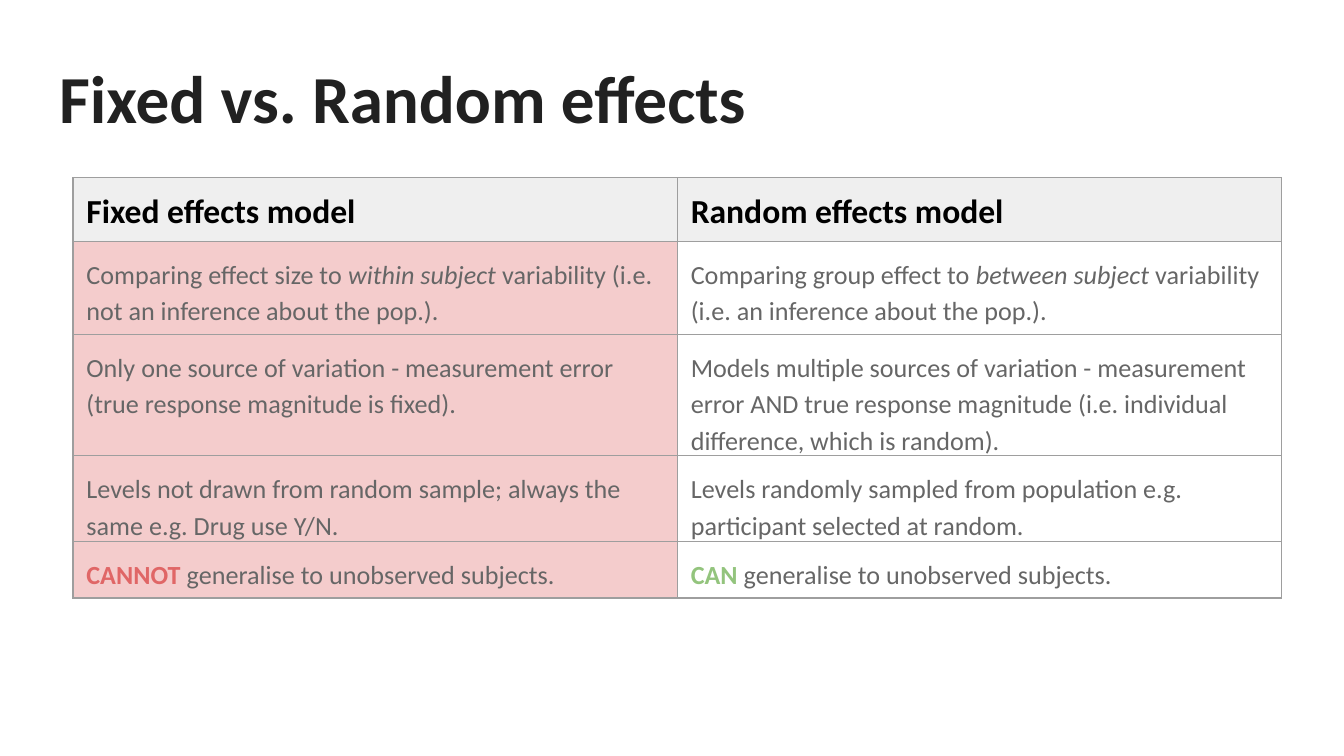
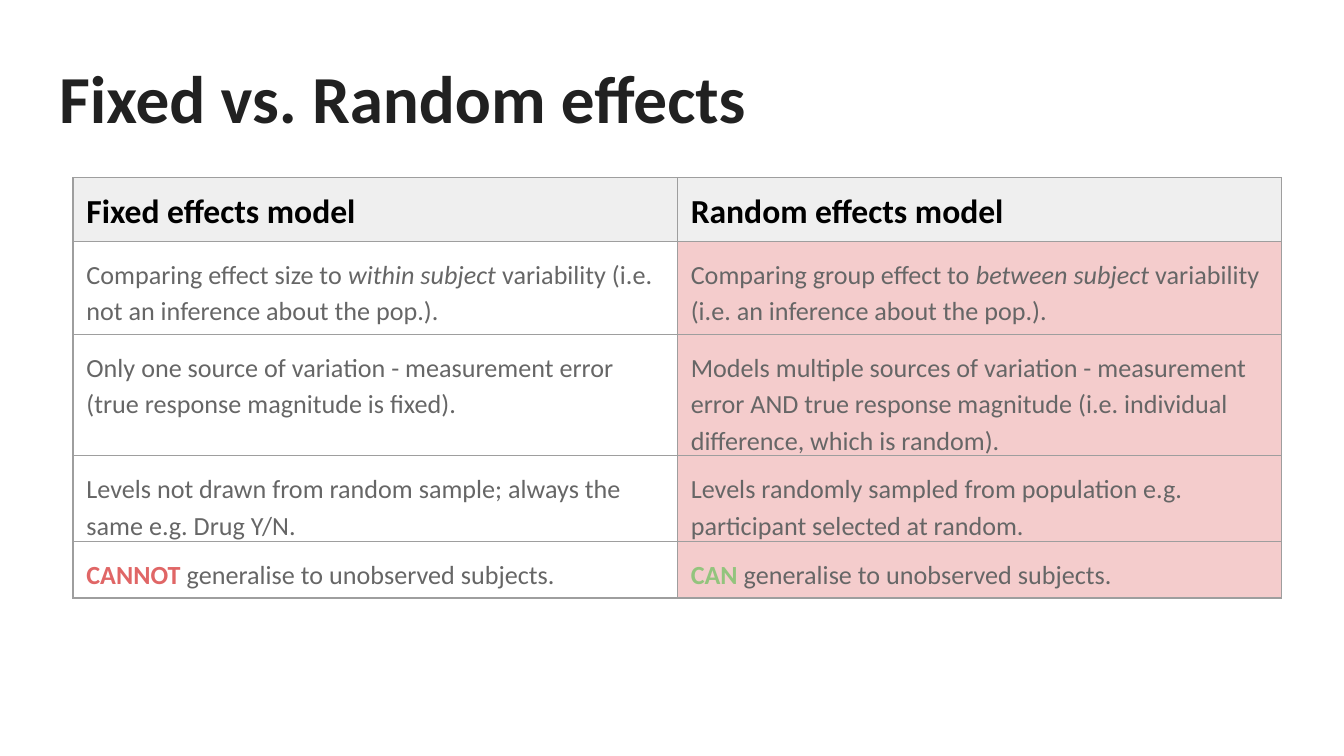
from lxml import etree
from pptx import Presentation
from pptx import util as u
from pptx.dml.color import RGBColor
from pptx.enum import text
from pptx.oxml import ns

COLOURS = {
    "page": "FFFFFF", "title": "212121", "heading": "000000", "body": "666666",
    "header": "EFEFEF", "highlight": "F4CCCC", "border": "9E9E9E",
    "negative": "E06666", "positive": "93C47D",
}
TITLE = "Fixed vs. Random effects"
HEADINGS = ["Fixed effects model", "Random effects model"]
ROW_HEIGHTS = [8.4, 12.3, 12.3, 7.5, 7.5]
TABLE_HEIGHT = 55.5
GENERALISE = " generalise to unobserved subjects."


class SlideWriter:
    """Holds the shared style and the current slide; lengths are percent of the slide."""

    font = "Calibri"
    inset = u.Inches(0.1)

    def __init__(self, deck):
        self.deck = deck
        self.page = None

    def colour(self, name):
        return RGBColor.from_string(COLOURS[name])

    def across(self, percent):
        return round(self.deck.slide_width * percent / 100)

    def down(self, percent):
        return round(self.deck.slide_height * percent / 100)

    def new_page(self):
        self.page = self.deck.slides.add_slide(self.deck.slide_layouts[6])
        background = self.page.background.fill
        background.solid()
        background.fore_color.rgb = self.colour("page")

    def style(self, paragraph, size, colour, bold=False):
        paragraph.font.name = self.font
        paragraph.font.size = u.Pt(size)
        paragraph.font.bold = bold
        paragraph.font.color.rgb = self.colour(colour)

    def title(self, words):
        box = self.page.shapes.add_textbox(
            self.across(3.41), self.down(5.7), self.across(93.2), self.down(15.7))
        frame = box.text_frame
        frame.word_wrap = True
        frame.vertical_anchor = text.MSO_ANCHOR.TOP
        frame.margin_left = frame.margin_right = self.inset
        frame.margin_top = frame.margin_bottom = self.inset
        para = frame.paragraphs[0]
        para.text = words
        self.style(para, 36, "title", bold=True)

    def borders(self, cell):
        properties = cell._tc.get_or_add_tcPr()
        for position, side in enumerate(("lnL", "lnR", "lnT", "lnB")):
            line = etree.Element(ns.qn(f"a:{side}"), w=str(u.Pt(0.75)))
            fill = etree.SubElement(line, ns.qn("a:solidFill"))
            etree.SubElement(fill, ns.qn("a:srgbClr"), val=COLOURS["border"])
            properties.insert(position, line)

    def cell(self, cell, fill):
        cell.margin_left = cell.margin_right = cell.margin_top = self.inset
        cell.margin_bottom = 0
        if fill:
            cell.fill.solid()
            cell.fill.fore_color.rgb = self.colour(fill)
        else:
            cell.fill.background()
        self.borders(cell)
        return cell.text_frame.paragraphs[0]

    def heading_cell(self, cell, words):
        para = self.cell(cell, "header")
        para.text = words
        self.style(para, 18, "heading", bold=True)

    def body_cell(self, cell, spans, fill):
        para = self.cell(cell, fill)
        para.line_spacing = 1.15
        para.space_after = u.Pt(16)
        self.style(para, 14, "body")
        for words, emphasis in spans:
            span = para.add_run()
            span.text = words
            if emphasis == "italic":
                span.font.italic = True
            elif emphasis:
                span.font.bold = True
                span.font.color.rgb = self.colour(emphasis)

    def table(self, headings, rows, highlighted):
        frame = self.page.shapes.add_table(
            len(rows) + 1, len(headings), self.across(5.43), self.down(23.5),
            self.across(89.94), self.down(TABLE_HEIGHT))
        table = frame.table
        table.first_row = table.horz_banding = False
        for row, height in zip(table.rows, ROW_HEIGHTS):
            row.height = self.down(height)
        frame.height = self.down(TABLE_HEIGHT)
        for column, heading in enumerate(headings):
            self.heading_cell(table.cell(0, column), heading)
            fill = "highlight" if column == highlighted else None
            for number, row in enumerate(rows, start=1):
                self.body_cell(table.cell(number, column), row[column], fill)


def comparison_rows(drug_example):
    return [
        ([("Comparing effect size to ", None), ("within subject", "italic"),
          (" variability (i.e. not an inference about the pop.).", None)],
         [("Comparing group effect to ", None), ("between subject", "italic"),
          (" variability (i.e. an inference about the pop.).", None)]),
        ([("Only one source of variation - measurement error "
           "(true response magnitude is fixed).", None)],
         [("Models multiple sources of variation - measurement error AND true "
           "response magnitude (i.e. individual difference, which is random).", None)]),
        ([("Levels not drawn from random sample; always the same "
           f"e.g. {drug_example}.", None)],
         [("Levels randomly sampled from population e.g. "
           "participant selected at random.", None)]),
        ([("CANNOT", "negative"), (GENERALISE, None)],
         [("CAN", "positive"), (GENERALISE, None)]),
    ]


def main():
    deck = Presentation()
    deck.slide_width = u.Inches(10)
    deck.slide_height = u.Inches(10 * 9 / 16)
    writer = SlideWriter(deck)
    for highlighted, drug_example in enumerate(("Drug use Y/N", "Drug Y/N")):
        writer.new_page()
        writer.title(TITLE)
        writer.table(HEADINGS, comparison_rows(drug_example), highlighted)
    deck.save("out.pptx")


if __name__ == "__main__":
    main()
